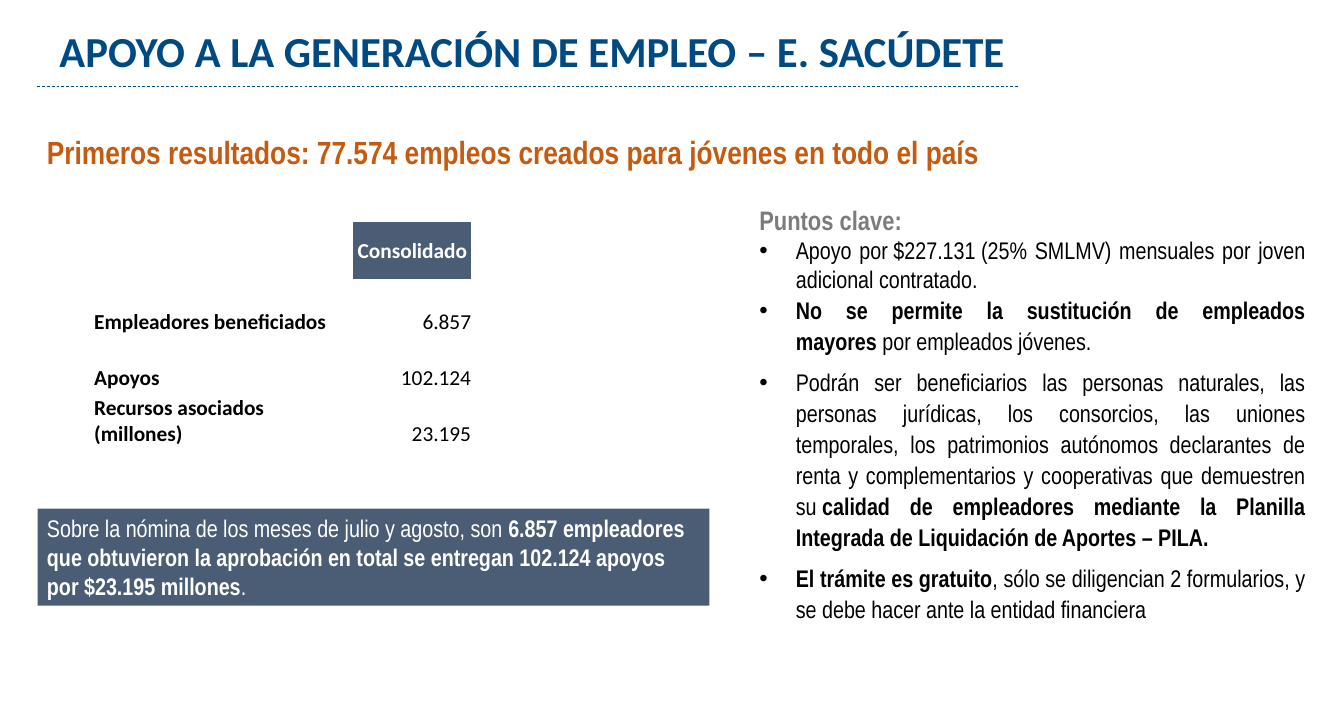
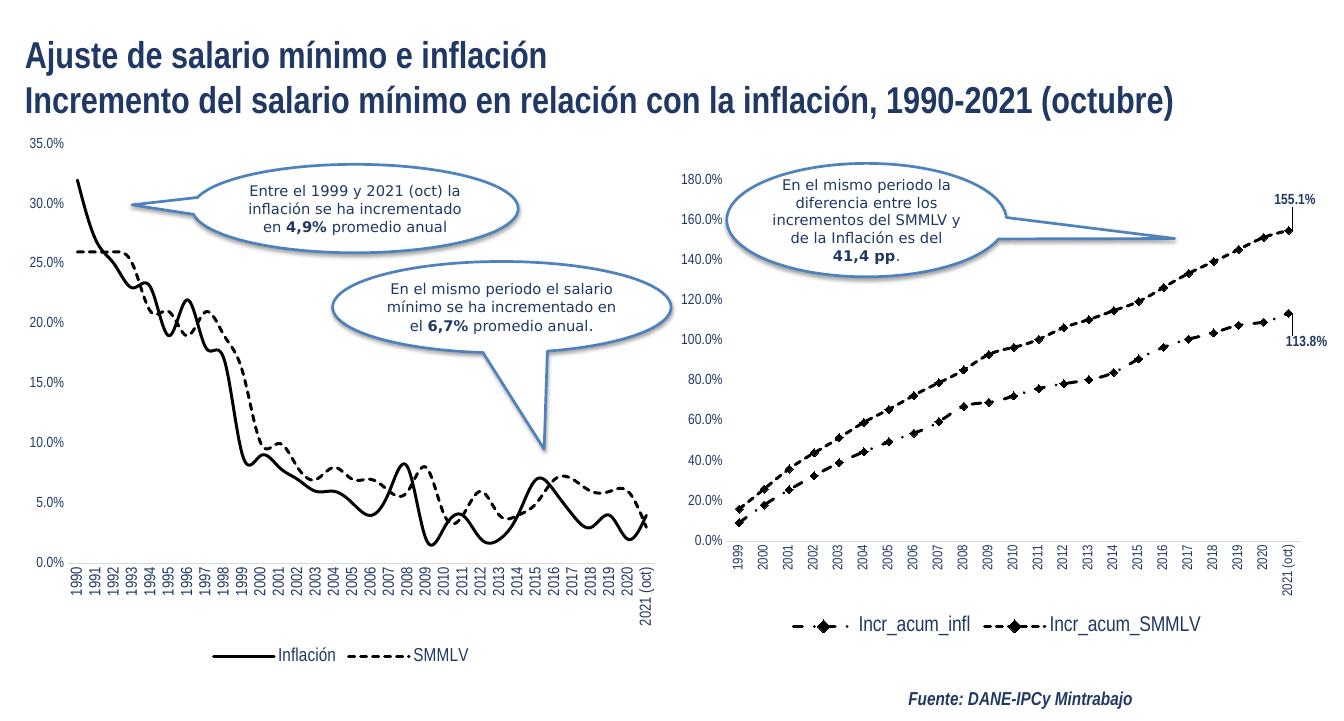
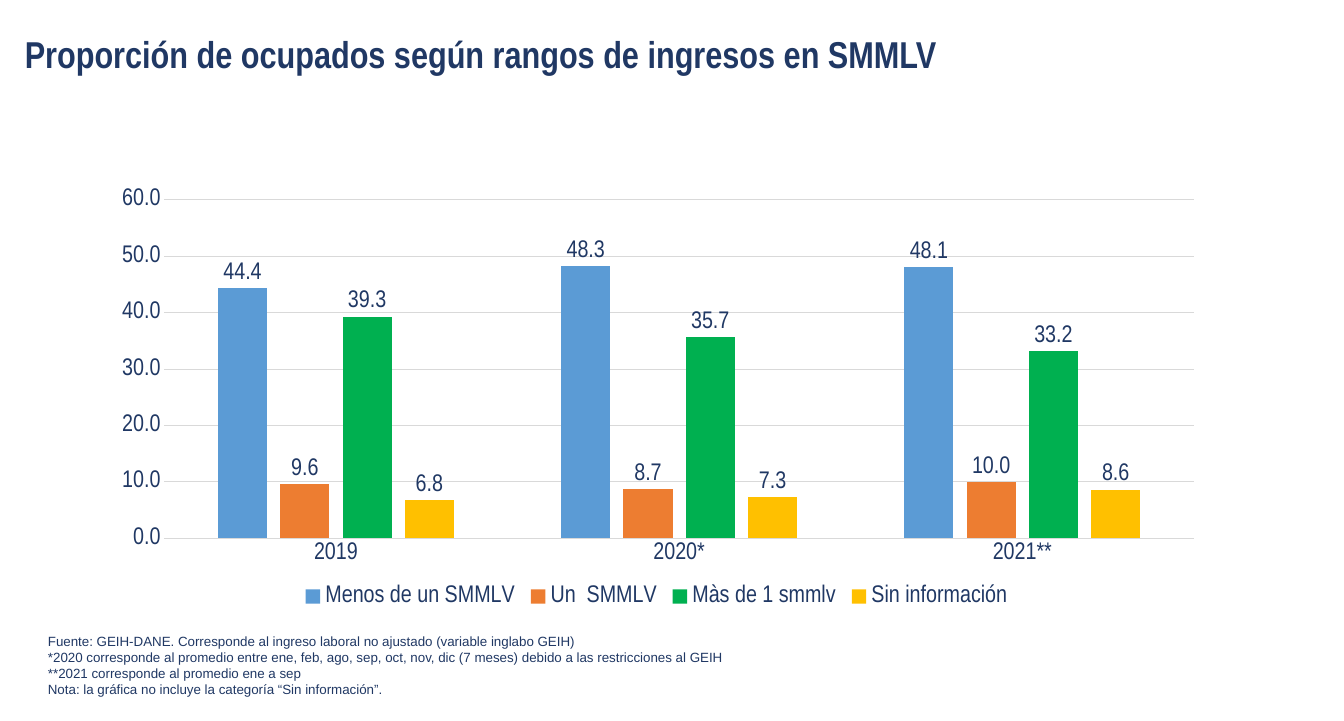
import dataclasses
import typing

import lxml.etree
import pptx
import pptx.chart.chart
import pptx.chart.data
import pptx.dml.color
import pptx.dml.line
import pptx.enum.chart
import pptx.enum.dml
import pptx.enum.shapes
import pptx.enum.text
import pptx.oxml.ns
import pptx.util

Inches = pptx.util.Inches
Pt = pptx.util.Pt
Align = pptx.enum.text.PP_ALIGN
Anchor = pptx.enum.text.MSO_ANCHOR
Dash = pptx.enum.dml.MSO_LINE
ChartType = pptx.enum.chart.XL_CHART_TYPE

NAVY, BLUE, SLATE, RUST = "203864", "004A84", "4B5D75", "C55A11"
GREY, RULE, CALLOUT_LINE = "7C7C7C", "D9D9D9", "4F81BD"
BLACK, WHITE = "000000", "FFFFFF"
NARROW = "Arial Narrow"
NBSP = chr(160)  # no-break space
C15 = "http://schemas.microsoft.com/office/drawing/2012/chart"


@dataclasses.dataclass(frozen=True)
class Style:
    size: float
    color: str = NAVY
    font: str = NARROW
    bold: bool = False
    italic: bool = False


class Run(typing.NamedTuple):
    text: str
    bold: bool = False
    size: typing.Optional[float] = None


@dataclasses.dataclass(frozen=True)
class Para:
    runs: typing.Sequence[Run]
    style: Style
    align: typing.Any = None
    bullet: bool = False
    spacing: typing.Optional[float] = None
    after: float = 0


class Box(typing.NamedTuple):
    left: float
    top: float
    width: float
    height: float

    def lengths(self) -> typing.List[int]:
        return [Inches(v) for v in self]


@dataclasses.dataclass(frozen=True)
class Callout:
    box: Box
    tip: typing.Tuple[float, float]
    runs: typing.Sequence[Run]


@dataclasses.dataclass(frozen=True)
class Series:
    name: str
    values: typing.Sequence[float]
    color: str = BLACK
    dash: typing.Any = None
    label_offset: typing.Optional[typing.Tuple[float, float]] = None  # inches


@dataclasses.dataclass(frozen=True)
class ChartLook:
    kind: typing.Any
    box: Box
    plot: Box  # inches on the slide
    number_format: str
    top_value: float
    step: float
    category_size: float
    value_size: float
    legend_size: float
    turned: bool = False
    grid: bool = False


TITLE = Style(28, bold=True)
BODY = Style(18, BLACK)


def rgb(color: str) -> pptx.dml.color.RGBColor:
    return pptx.dml.color.RGBColor.from_string(color)


def sub(parent, tag: str, **attrs: str):
    return lxml.etree.SubElement(parent, pptx.oxml.ns.qn(tag), attrs)


def paint(shape, color: str) -> None:
    shape.fill.solid()
    shape.fill.fore_color.rgb = rgb(color)


def set_line(line: pptx.dml.line.LineFormat, color: str, width: float, dash=None) -> None:
    line.color.rgb = rgb(color)
    line.width = Pt(width)
    if dash is not None:
        line.dash_style = dash


def set_font(font, style: Style) -> None:
    font.name, font.size = style.font, Pt(style.size)
    font.bold, font.italic = style.bold, style.italic
    font.color.rgb = rgb(style.color)


def add_bullet(p) -> None:
    pPr = p._p.get_or_add_pPr()
    indent = Inches(0.38)
    pPr.set("marL", str(indent))
    pPr.set("indent", str(-indent))
    sub(pPr, "a:buFont", typeface="Arial")
    sub(pPr, "a:buChar", char="•")


def write(tf, paras: typing.Sequence[Para]) -> None:
    for i, para in enumerate(paras):
        p = tf.paragraphs[0] if i == 0 else tf.add_paragraph()
        p.alignment = para.align
        if para.spacing:
            p.line_spacing = para.spacing
        if para.after:
            p.space_after = Pt(para.after)
        if para.bullet:
            add_bullet(p)
        for run in para.runs:
            r = p.add_run()
            r.text = run.text
            set_font(r.font, dataclasses.replace(
                para.style, bold=para.style.bold or run.bold,
                size=run.size or para.style.size))


def plain(style: Style, *lines: str) -> typing.List[Para]:
    return [Para([Run(line)], style) for line in lines]


def add_text(s, box: Box, paras: typing.Sequence[Para], wrap: bool = True) -> None:
    tf = s.shapes.add_textbox(*box.lengths()).text_frame
    tf.word_wrap = wrap
    write(tf, paras)


def add_title(s, *lines: str) -> None:
    add_text(s, Box(0.16, 0.28, 12.91, 1.04), plain(TITLE, *lines))


def add_rule(s, left: float, right: float, y: float) -> None:
    line = s.shapes.add_connector(
        pptx.enum.shapes.MSO_CONNECTOR.STRAIGHT,
        Inches(left), Inches(y), Inches(right), Inches(y))
    set_line(line.line, BLUE, 0.5, Dash.DASH)
    sub(line._element.spPr, "a:effectLst")


def add_band(s, box: Box, runs: typing.Sequence[Run]) -> None:
    sp = s.shapes.add_shape(pptx.enum.shapes.MSO_SHAPE.RECTANGLE, *box.lengths())
    sp.shadow.inherit = False
    paint(sp, SLATE)
    sp.line.fill.background()
    tf = sp.text_frame
    tf.word_wrap = True
    tf.vertical_anchor = Anchor.TOP
    write(tf, [Para(runs, Style(18, WHITE), Align.LEFT)])


def add_callout(s, callout: Callout) -> None:
    sp = s.shapes.add_shape(pptx.enum.shapes.MSO_SHAPE.OVAL_CALLOUT, *callout.box.lengths())
    sp.adjustments[0], sp.adjustments[1] = callout.tip
    paint(sp, WHITE)
    set_line(sp.line, CALLOUT_LINE, 2)
    sp.shadow.inherit = False
    effects = sp._element.spPr.find(pptx.oxml.ns.qn("a:effectLst"))
    shadow = sub(effects, "a:outerShdw", blurRad=str(Pt(3)), dist=str(Pt(1.8)),
                 dir="5400000", rotWithShape="0")
    sub(sub(shadow, "a:srgbClr", val=BLACK), "a:alpha", val="35000")
    tf = sp.text_frame
    tf.word_wrap = True
    tf.vertical_anchor = Anchor.MIDDLE
    tf.margin_left = tf.margin_right = Inches(0.03)
    tf.margin_top = tf.margin_bottom = Inches(0.05)
    write(tf, [Para(callout.runs, Style(11, font="DejaVu Sans"), Align.CENTER)])


def add_results_table(s, rows: typing.Sequence[typing.Tuple[str, str]]) -> None:
    box = Box(0.97, 2.3, 3.94, 2.35)
    table = s.shapes.add_table(len(rows), 2, *box.lengths()).table
    table.first_row = table.horz_banding = False
    for column, width in zip(table.columns, (2.7, 1.24)):
        column.width = Inches(width)
    for i, row in enumerate(rows):
        table.rows[i].height = Inches(0.58 if i else 0.61)
        for j, text in enumerate(row):
            cell = table.cell(i, j)
            header = i == 0 and j == 1
            if header:
                paint(cell, SLATE)
            else:
                cell.fill.background()
            cell.margin_left = cell.margin_right = cell.margin_top = Inches(0.01)
            cell.margin_bottom = 0
            cell.vertical_anchor = Anchor.MIDDLE if header else Anchor.BOTTOM
            align = Align.CENTER if header else (Align.LEFT, Align.RIGHT)[j]
            style = Style(16, WHITE if header else BLACK, "Calibri", header or j == 0)
            if text:
                write(cell.text_frame, [Para([Run(text)], style, align)])


def place_plot(chart: pptx.chart.chart.Chart, box: Box, plot: Box) -> None:
    area = chart.element.xpath(".//c:plotArea")[0]
    for old in area.xpath("c:layout"):
        area.remove(old)
    layout = sub(area, "c:layout")
    area.insert(0, layout)
    manual = sub(layout, "c:manualLayout")
    fractions = ((plot.left - box.left) / box.width, (plot.top - box.top) / box.height,
                 plot.width / box.width, plot.height / box.height)
    for tag, value in zip(("layoutTarget", "xMode", "yMode", "x", "y", "w", "h"),
                          ("inner", "edge", "edge", *fractions)):
        sub(manual, "c:" + tag, val=str(value))


def label_last_point(series, item: Series, box: Box) -> None:
    """Label the last point away from its marker, joined by a leader line."""
    label = series.points[len(item.values) - 1].data_label
    set_font(label.font, Style(11, bold=True))
    series.data_labels.show_value = False
    dLbls = series._element.xpath("c:dLbls")[0]
    dLbl = dLbls.xpath("c:dLbl")[0]
    layout = sub(dLbl, "c:layout")
    dLbl.insert(1, layout)
    manual = sub(layout, "c:manualLayout")
    for axis, shift, extent in zip("xy", item.label_offset, (box.width, box.height)):
        sub(manual, "c:" + axis, val=str(shift / extent))
    ext = sub(sub(dLbls, "c:extLst"), "c:ext", uri="{CE6537A1-D6FC-4f65-9D91-7224C49458BB}")
    lxml.etree.SubElement(ext, "{%s}showLeaderLines" % C15, {"val": "1"}, nsmap={"c15": C15})


def style_line(series, item: Series, look: ChartLook) -> None:
    series.smooth = True
    set_line(series.format.line, item.color, 2.25, item.dash)
    series._element.xpath("c:spPr/a:ln")[0].set("cap", "rnd")
    if look.kind == ChartType.LINE_MARKERS:
        series.marker.style = pptx.enum.chart.XL_MARKER_STYLE.DIAMOND
        series.marker.size = 6
        paint(series.marker.format, item.color)
        set_line(series.marker.format.line, item.color, 0.75)
    if item.label_offset:
        label_last_point(series, item, look.box)


def style_columns(plot, items: typing.Sequence[Series], look: ChartLook) -> None:
    plot.gap_width, plot.overlap = 219, -27
    for series, item in zip(plot.series, items):
        paint(series.format, item.color)
        labels = series.data_labels
        labels.show_value = True
        labels.position = pptx.enum.chart.XL_LABEL_POSITION.OUTSIDE_END
        labels.number_format, labels.number_format_is_linked = look.number_format, False
        set_font(labels.font, Style(look.value_size))


def add_chart(s, look: ChartLook, categories: typing.Sequence[str],
              items: typing.Sequence[Series]) -> None:
    data = pptx.chart.data.CategoryChartData(number_format=look.number_format)
    data.categories = categories
    for item in items:
        data.add_series(item.name, item.values)
    chart = s.shapes.add_chart(look.kind, *look.box.lengths(), data).chart
    set_font(chart.font, Style(look.value_size))
    chart.has_title = False
    chart.has_legend = True
    chart.legend.position = pptx.enum.chart.XL_LEGEND_POSITION.BOTTOM
    chart.legend.include_in_layout = False
    set_font(chart.legend.font, Style(look.legend_size))

    for axis, size in ((chart.category_axis, look.category_size),
                       (chart.value_axis, look.value_size)):
        axis.major_tick_mark = axis.minor_tick_mark = pptx.enum.chart.XL_TICK_MARK.NONE
        set_font(axis.tick_labels.font, Style(size))
    set_line(chart.category_axis.format.line, RULE, 0.75)
    if look.turned:
        chart.element.xpath(".//c:catAx/c:txPr/a:bodyPr")[0].set("rot", "-5400000")
    value_axis = chart.value_axis
    value_axis.minimum_scale, value_axis.maximum_scale = 0, look.top_value
    value_axis.major_unit = look.step
    value_axis.tick_labels.number_format = look.number_format
    value_axis.tick_labels.number_format_is_linked = False
    value_axis.format.line.fill.background()
    value_axis.has_major_gridlines = look.grid
    if look.grid:
        set_line(value_axis.major_gridlines.format.line, RULE, 0.75)

    plot = chart.plots[0]
    plot.vary_by_categories = False
    if look.kind == ChartType.COLUMN_CLUSTERED:
        style_columns(plot, items, look)
    else:
        for series, item in zip(plot.series, items):
            style_line(series, item, look)
    place_plot(chart, look.box, look.plot)


def years(first: int) -> typing.List[str]:
    return [str(year) for year in range(first, 2021)] + ["2021 (oct)"]


def build_employment(s) -> None:
    add_text(s, Box(0.52, 0.21, 11.97, 0.64), plain(
        Style(32, BLUE, "Calibri", True), "APOYO A LA GENERACIÓN DE EMPLEO – E. SACÚDETE"))
    add_rule(s, 0.39, 10.59, 0.9)
    points = [
        [Run(f"Apoyo por{NBSP}$227.131{NBSP}(25% SMLMV) mensuales por joven "
             "adicional contratado.")],
        [Run("No se permite la sustitución de empleados mayores", True),
         Run(f"{NBSP}por empleados jóvenes.")],
        [Run("Podrán ser beneficiarios las personas naturales, las personas jurídicas, los "
             "consorcios, las uniones temporales, los patrimonios autónomos declarantes de "
             f"renta y complementarios y cooperativas que demuestren su{NBSP}"),
         Run("calidad de empleadores mediante la Planilla Integrada de Liquidación de "
             "Aportes – PILA.", True)],
        [Run("El trámite es gratuito", True),
         Run(", sólo se diligencian 2 formularios, y se debe hacer ante la entidad financiera")],
    ]
    add_text(s, Box(7.8, 2.07, 5.88, 4.56),
             plain(Style(20, GREY, bold=True), "Puntos clave:")
             + [Para(points[0], BODY, Align.JUSTIFY, True)]
             + [Para(runs, BODY, Align.JUSTIFY, True, 1.07, 8) for runs in points[1:]])
    add_text(s, Box(0.39, 1.33, 11.97, 0.5), plain(
        Style(24, RUST, bold=True),
        "Primeros resultados: 77.574 empleos creados para jóvenes en todo el país"))
    add_band(s, Box(0.39, 5.29, 6.99, 1.01), [
        Run("Sobre la nómina de los meses de julio y agosto, son "),
        Run("6.857 empleadores que obtuvieron la aprobación en total se entregan "
            "102.124 apoyos por $23.195 millones", True),
        Run(".")])
    add_results_table(s, [("", "Consolidado"), ("Empleadores beneficiados", "6.857"),
                          ("Apoyos", "102.124"), ("Recursos asociados (millones)", "23.195")])


def build_minimum_wage(s) -> None:
    add_title(s, "Ajuste de salario mínimo e inflación",
              "Incremento del salario mínimo en relación con la inflación, 1990-2021 (octubre)")
    add_chart(s, ChartLook(ChartType.LINE, Box(0.16, 1.32, 6.78, 5.64),
                           Box(0.71, 1.5, 6.11, 4.36), "0.0%", 0.35, 0.05, 12, 11, 14, True),
              years(1990), [
        Series("Inflación", [
            0.32, 0.27, 0.25, 0.23, 0.23, 0.19, 0.22, 0.18, 0.17, 0.09, 0.09,
            0.08, 0.07, 0.06, 0.06, 0.05, 0.04, 0.06, 0.08, 0.02, 0.03, 0.04,
            0.02, 0.02, 0.04, 0.07, 0.06, 0.04, 0.03, 0.04, 0.02, 0.04]),
        Series("SMMLV", [
            0.26, 0.26, 0.26, 0.25, 0.21, 0.21, 0.19, 0.21, 0.19, 0.16, 0.1,
            0.1, 0.08, 0.07, 0.08, 0.07, 0.07, 0.06, 0.06, 0.08, 0.04, 0.04,
            0.06, 0.04, 0.04, 0.05, 0.07, 0.07, 0.06, 0.06, 0.06, 0.03],
            dash=Dash.SQUARE_DOT)])
    add_chart(s, ChartLook(ChartType.LINE_MARKERS, Box(6.95, 1.71, 6.86, 4.95),
                           Box(7.56, 1.88, 5.99, 3.75), "0.0%", 1.8, 0.2, 10.5, 11, 16, True),
              years(1999), [
        Series("Incr_acum_infl", [
            0.092, 0.18, 0.256, 0.326, 0.391, 0.446, 0.495, 0.539, 0.596, 0.673, 0.693,
            0.725, 0.762, 0.786, 0.806, 0.842, 0.91, 0.968, 1.009, 1.04, 1.078, 1.094,
            1.138], dash=Dash.DASH_DOT, label_offset=(-0.11, 0.3)),
        Series("Incr_acum_SMMLV", [
            0.16, 0.26, 0.36, 0.44, 0.515, 0.593, 0.658, 0.728, 0.791, 0.855, 0.932,
            0.968, 1.008, 1.066, 1.106, 1.151, 1.197, 1.267, 1.337, 1.396, 1.456, 1.516,
            1.551], dash=Dash.SQUARE_DOT, label_offset=(-0.23, -0.31))])
    for callout in (
        Callout(Box(2, 1.71, 3.39, 0.92), (-0.685, -0.042), [
            Run("Entre el 1999 y 2021 (oct) la inflación se ha incrementado en "),
            Run("4,9%", True), Run(" promedio anual")]),
        Callout(Box(3.46, 2.72, 3.52, 0.95), (0.125, 1.554), [
            Run("En el mismo periodo el salario mínimo se ha incrementado en el "),
            Run("6,7%", True), Run(" promedio anual"), Run(".", size=12)]),
        Callout(Box(7.56, 1.7, 2.91, 1.18), (1.101, 0.162), [
            Run("En el mismo periodo la diferencia entre los incrementos del SMMLV "
                "y de la Inflación es del "),
            Run("41,4 pp", True), Run(".")]),
    ):
        add_callout(s, callout)
    add_text(s, Box(9.35, 7.1, 2.56, 0.34),
             plain(Style(14, bold=True, italic=True), "Fuente: DANE-IPCy Mintrabajo"), False)


def build_income_ranges(s) -> None:
    add_chart(s, ChartLook(ChartType.COLUMN_CLUSTERED, Box(1.03, 1.89, 11.6, 4.48),
                           Box(1.71, 2.08, 10.71, 3.52), "#,##0.0", 60, 10, 18, 18, 18,
                           grid=True),
              ["2019", "2020*", "2021**"], [
        Series("Menos de un SMMLV", [44.4, 48.3, 48.1], "5B9BD5"),
        Series("Un  SMMLV", [9.6, 8.7, 10], "ED7D31"),
        Series("Màs de 1 smmlv", [39.3, 35.7, 33.2], "00B050"),
        Series("Sin información", [6.8, 7.3, 8.6], "FFC000")])
    add_title(s, "Proporción de ocupados según rangos de ingresos en SMMLV")
    add_text(s, Box(0.4, 6.54, 8.21, 0.77), plain(
        Style(10, font="Arial"),
        "Fuente: GEIH-DANE. Corresponde al ingreso laboral no ajustado (variable inglabo GEIH)",
        "*2020 corresponde al promedio entre ene, feb, ago, sep, oct, nov, dic (7 meses) "
        "debido a las restricciones al GEIH",
        "**2021 corresponde al promedio ene a sep",
        "Nota: la gráfica no incluye la categoría “Sin información”."))


def main() -> None:
    prs = pptx.Presentation()
    prs.slide_width, prs.slide_height = Inches(13.98), Inches(7.5)
    for build in (build_employment, build_minimum_wage, build_income_ranges):
        build(prs.slides.add_slide(prs.slide_layouts[6]))
    prs.save("out.pptx")


if __name__ == "__main__":
    main()
